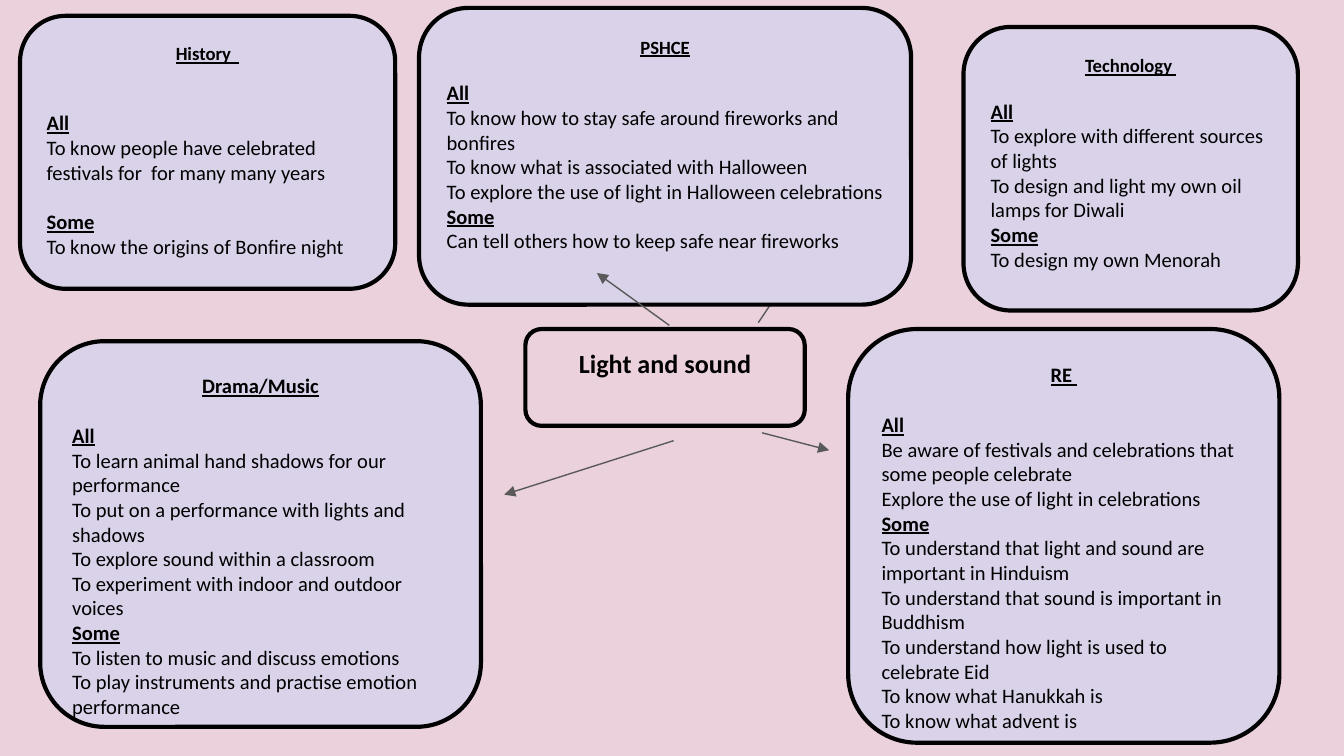
"""Build a curriculum web of subject cards around the topic Light and sound."""
import pptx
import pptx.dml.color
import pptx.enum.shapes
import pptx.enum.text
import pptx.oxml
import pptx.oxml.ns
import pptx.util

Cm = pptx.util.Cm
Pt = pptx.util.Pt
ALIGN = pptx.enum.text.PP_ALIGN
COLORS = {"pink": "EAD1DC", "lilac": "D9D2E9", "ink": "000000", "gray": "595959"}


def rgb(name):
    return pptx.dml.color.RGBColor.from_string(COLORS[name])


def add_box(slide, place, fill):
    kind = pptx.enum.shapes.MSO_SHAPE.ROUNDED_RECTANGLE
    box = slide.shapes.add_shape(kind, *map(Cm, place))
    box.shadow.inherit = False
    box.fill.solid()
    box.fill.fore_color.rgb = rgb(fill)
    box.line.color.rgb = rgb("ink")
    box.line.width = Pt(2.25)
    frame = box.text_frame
    frame.word_wrap = True
    frame.vertical_anchor = pptx.enum.text.MSO_ANCHOR.TOP
    frame.margin_left = frame.margin_right = Cm(0.25)
    frame.margin_top = frame.margin_bottom = Cm(0.25)
    return frame


def add_text(frame, text, size, align=ALIGN.LEFT, bold=False, under=False, gap=0):
    first = not frame.text
    para = frame.paragraphs[0] if first else frame.add_paragraph()
    para.text = text
    para.alignment = align
    para.space_before = Pt(gap)
    for run in para.runs:
        font = run.font
        font.name = "Calibri"
        font.size = Pt(size)
        font.bold = bold
        font.underline = under
        font.color.rgb = rgb("ink")


def add_card(slide, place, title, goals, extras, size=10, gap=12, rest=0):
    frame = add_box(slide, place, "lilac")
    add_text(frame, title, size, ALIGN.CENTER, True, True)
    for head, lines, space in (("All", goals, gap), ("Some", extras, rest)):
        add_text(frame, head, 11, bold=True, under=True, gap=space)
        for line in lines:
            add_text(frame, line, 11)


def add_arrow(slide, *ends):
    kind = pptx.enum.shapes.MSO_CONNECTOR.STRAIGHT
    arrow = slide.shapes.add_connector(kind, *map(Cm, ends))
    arrow.line.color.rgb = rgb("gray")
    arrow.line.width = Pt(0.75)
    tip = pptx.oxml.parse_xml(
        f'<a:tailEnd {pptx.oxml.ns.nsdecls("a")} type="triangle"/>')
    arrow.line._get_or_add_ln().append(tip)
    flat = pptx.oxml.parse_xml(f'<a:effectLst {pptx.oxml.ns.nsdecls("a")}/>')
    arrow._element.spPr.append(flat)


def main():
    deck = pptx.Presentation()
    deck.slide_width, deck.slide_height = Cm(25.4), Cm(14.29)
    slide = deck.slides.add_slide(deck.slide_layouts[6])
    slide.background.fill.solid()
    slide.background.fill.fore_color.rgb = rgb("pink")

    topic = add_box(slide, (9.93, 6.22, 5.28, 1.83), "pink")
    add_text(topic, "Light and sound", 14, ALIGN.CENTER, True)

    add_card(slide, (18.21, 0.51, 6.32, 5.36), "Technology ", [
        "To explore with different sources of lights",
        "To design and light my own oil lamps for Diwali",
    ], ["To design my own Menorah"])
    add_card(slide, (0.76, 6.45, 8.33, 7.29), "Drama/Music", [
        "To learn animal hand shadows for our performance",
        "To put on a performance with lights and shadows",
        "To explore sound within a classroom",
        "To experiment with indoor and outdoor voices",
    ], [
        "To listen to music and discuss emotions",
        "To play instruments and practise emotion performance",
    ], size=11, gap=13.4)

    add_arrow(slide, 14.4, 8.18, 15.67, 8.51)
    add_arrow(slide, 14.33, 6.1, 14.76, 5.46)

    add_card(slide, (7.92, 0.15, 9.3, 5.61), "PSHCE", [
        "To know how to stay safe around fireworks and bonfires",
        "To know what is associated with Halloween",
        "To explore the use of light in Halloween celebrations",
    ], ["Can tell others how to keep safe near fireworks"])
    add_card(slide, (16.03, 6.22, 8.15, 7.82), "RE ", [
        "Be aware of festivals and celebrations that some people celebrate",
        "Explore the use of light in celebrations",
    ], [
        "To understand that light and sound are important in Hinduism",
        "To understand that sound is important in Buddhism",
        "To understand how light is used to celebrate Eid",
        "To know what Hanukkah is",
        "To know what advent is",
    ], size=11, gap=13.4)

    add_arrow(slide, 12.65, 6.15, 11.28, 5.16)
    add_arrow(slide, 12.73, 8.33, 9.53, 9.35)

    add_card(slide, (0.38, 0.3, 7.09, 5.16), "History  ", [
        "To know people have celebrated festivals for  for many many years",
    ], ["To know the origins of Bonfire night"], gap=24.4, rest=13.4)

    deck.save("out.pptx")


if __name__ == "__main__":
    main()
